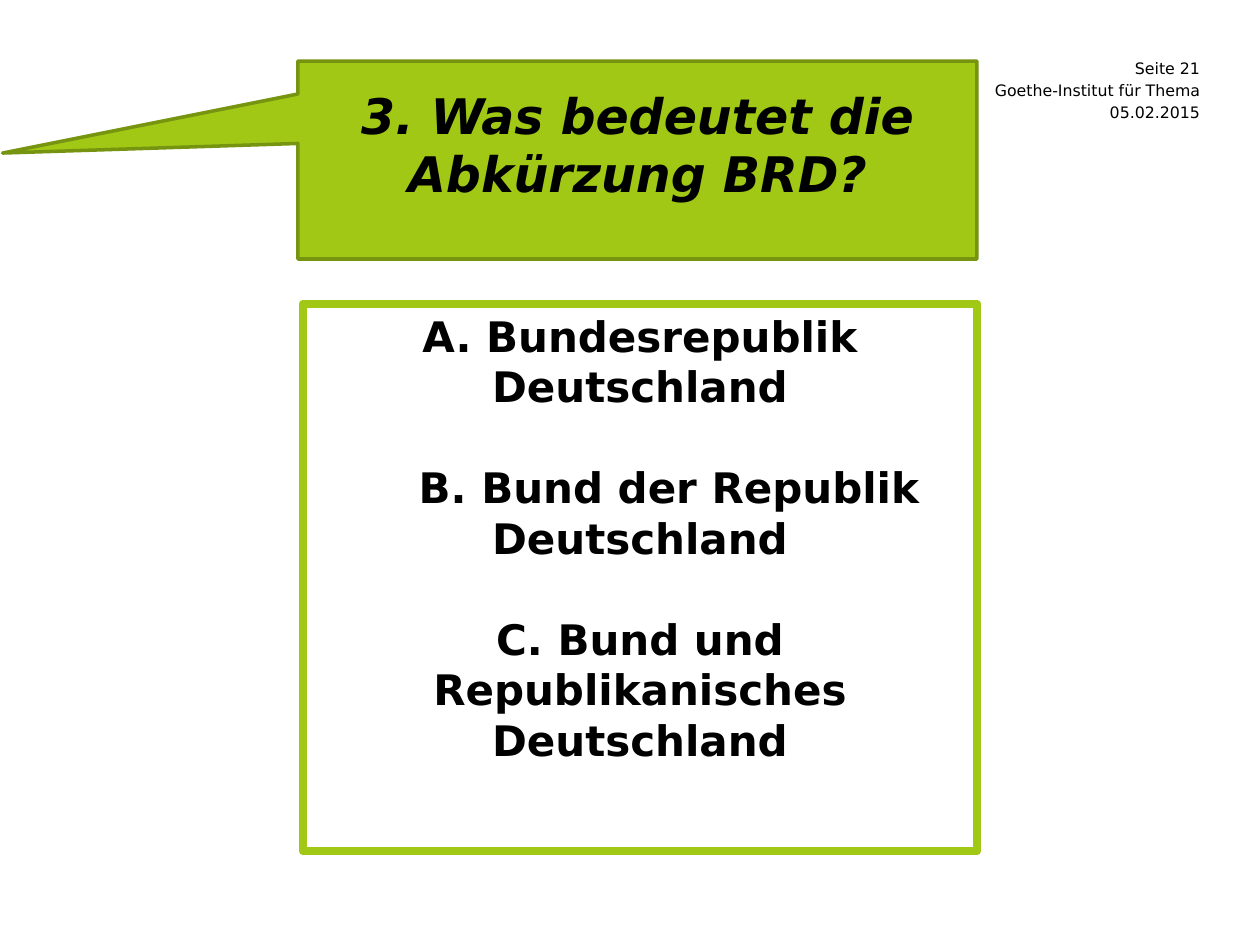
from pptx import Presentation
from pptx.dml.color import RGBColor
from pptx.enum.shapes import MSO_SHAPE
from pptx.enum.text import MSO_ANCHOR, PP_ALIGN
from pptx.util import Pt

# Content
HEADER = ["Seite 21", "Goethe-Institut für Thema", "05.02.2015"]
QUESTION = "3. Was bedeutet die Abkürzung BRD?"
# Answer and its first-line indent in px
ANSWERS = [
    ("A. Bundesrepublik Deutschland", 0),
    ("B. Bund der Republik Deutschland", 58),
    ("C. Bund und Republikanisches Deutschland", 0),
]

FONT = "DejaVu Sans"
BLACK = RGBColor(0x00, 0x00, 0x00)
GREEN = RGBColor(0xA0, 0xC8, 0x14)
DARK_GREEN = RGBColor(0x76, 0x94, 0x0F)
RECT, CALLOUT = MSO_SHAPE.RECTANGLE, MSO_SHAPE.RECTANGULAR_CALLOUT
TOP, MIDDLE = MSO_ANCHOR.TOP, MSO_ANCHOR.MIDDLE
CENTER, RIGHT = PP_ALIGN.CENTER, PP_ALIGN.RIGHT


def px(n):
    return round(n * 914400 / 126)


def write(p, text, size, align=CENTER, bold=False, italic=False, before=0, indent=0):
    p.alignment = align
    if before:
        p.space_before = Pt(before)
    if indent:
        pPr = p._p.get_or_add_pPr()
        pPr.set("marL", "0")
        pPr.set("indent", str(px(indent)))
    r = p.add_run()
    r.text = text
    f = r.font
    f.name, f.size, f.bold, f.italic = FONT, Pt(size), bold, italic
    f.color.rgb = BLACK


def add_box(kind, x, y, w, h, line, width, fill=None):
    sp = s.shapes.add_shape(kind, px(x), px(y), px(w), px(h))
    sp.shadow.inherit = False
    if fill is None:
        sp.fill.background()
    else:
        sp.fill.solid()
        sp.fill.fore_color.rgb = fill
    sp.line.color.rgb = line
    sp.line.width = Pt(width)
    sp.text_frame.word_wrap = True
    sp.text_frame.vertical_anchor = TOP
    return sp


prs = Presentation()
prs.slide_width, prs.slide_height = px(1260), px(945)
s = prs.slides.add_slide(prs.slide_layouts[6])

# Page details, top right
for i, text in enumerate(HEADER):
    tf = s.shapes.add_textbox(px(922), px(58 + 22 * i), px(278), px(20)).text_frame
    tf.margin_left = tf.margin_right = tf.margin_top = tf.margin_bottom = 0
    tf.word_wrap = False
    tf.vertical_anchor = MIDDLE
    write(tf.paragraphs[0], text, 9, align=RIGHT)

# Question in a speech bubble
bubble = add_box(CALLOUT, 298, 61, 679, 198, DARK_GREEN, 2, fill=GREEN)
bubble.adjustments[0] = -0.935
bubble.adjustments[1] = -0.035
bubble.text_frame.margin_top = px(24)
write(bubble.text_frame.paragraphs[0], QUESTION, 28, bold=True, italic=True)

# Answers in a frame, one line apart
tf = add_box(RECT, 303, 304, 674, 547, GREEN, 5).text_frame
for i, (text, indent) in enumerate(ANSWERS):
    p = tf.add_paragraph() if i else tf.paragraphs[0]
    write(p, text, 24, bold=True, before=29 if i else 0, indent=indent)

prs.save("out.pptx")
